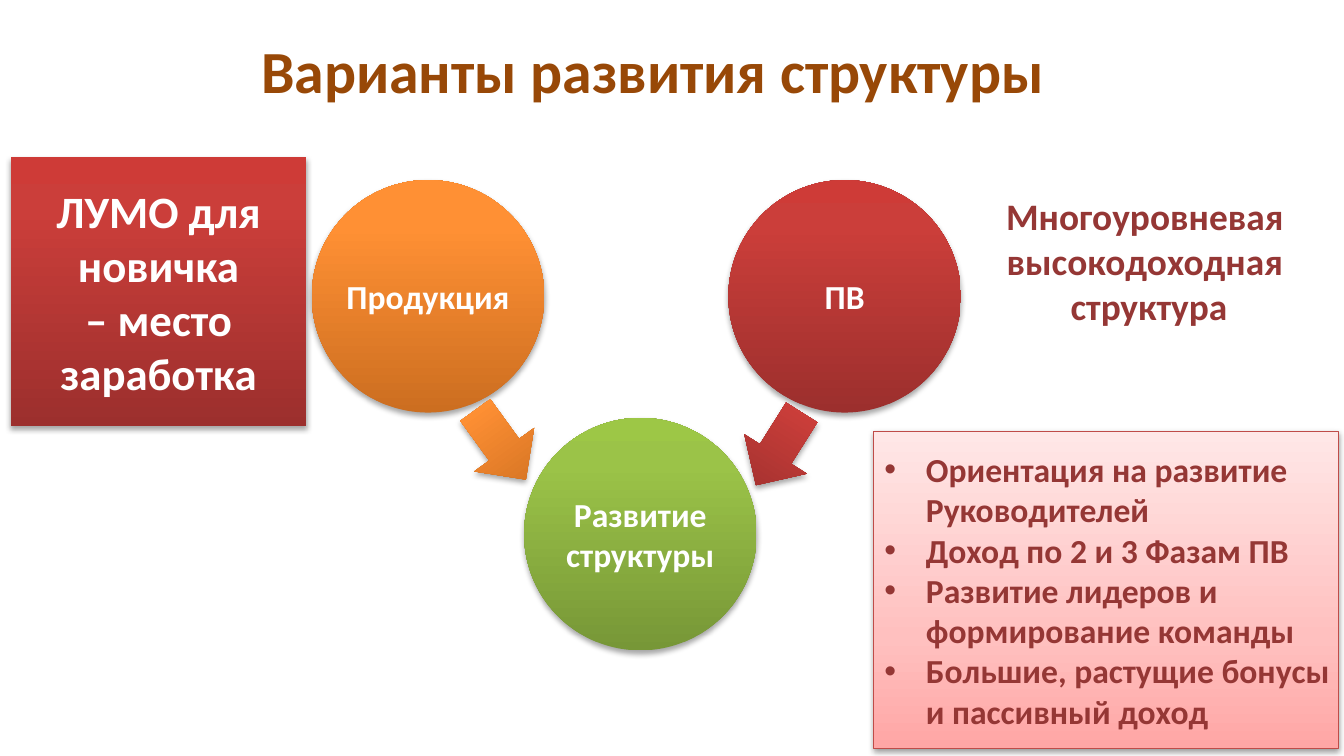
"""Build a slide on the ways a sales structure develops."""
from dataclasses import dataclass
from typing import NamedTuple

from pptx import Presentation, util as u
from pptx.dml.color import RGBColor
from pptx.enum import shapes, text
from pptx.oxml import parse_xml
from pptx.oxml.ns import nsdecls, qn

WIDE = u.Inches(10)
HIGH = WIDE * 9 // 16
CELL = 0.1
HUES = {"white": "FFFFFF", "brown": "984807", "wine": "953735", "edge": "BF4C48"}
FADES = {
    "orange": ((0, "CC6E20"), (80, "FF9034"), (100, "FF9136")),
    "red": ((0, "9C2F2D"), (80, "CB3E3A"), (100, "CE3B37")),
    "green": ((0, "779737"), (80, "9BC348"), (100, "9DC746")),
    "pink": ((0, "FFA6A5"), (35, "FFC0BF"), (100, "FFE7E7")),
}
KIND = shapes.MSO_SHAPE
NONE = (0, 0, 0, 0)
SNUG = (0, 0.04, 0, 0.04)
DISC = 17.3


class Box(NamedTuple):
    col: float
    row: float
    cols: float
    rows: float

    def lens(self) -> list:
        return [u.Inches(n * CELL) for n in self]


@dataclass
class Words:
    lines: tuple
    size: int
    hue: str
    pad: tuple = (0.1, 0.05, 0.1, 0.05)
    mid: bool = True
    wrap: bool = True
    list: bool = False


@dataclass
class Form:
    kind: int
    box: Box
    fade: str
    words: Words | None = None
    turn: float = 0
    edge: str | None = None
    dim: int = 35
    drop: float = 1.8


def write(shape, words: Words) -> None:
    frame = shape.text_frame
    frame.word_wrap = words.wrap
    frame.vertical_anchor = text.MSO_ANCHOR.MIDDLE if words.mid else text.MSO_ANCHOR.TOP
    (frame.margin_left, frame.margin_top,
     frame.margin_right, frame.margin_bottom) = map(u.Inches, words.pad)
    for num, line in enumerate(words.lines):
        para = frame.add_paragraph() if num else frame.paragraphs[0]
        para.text = line
        para.alignment = text.PP_ALIGN.LEFT if words.list else text.PP_ALIGN.CENTER
        if words.list:
            prop = para._p.get_or_add_pPr()
            prop.set("marL", str(u.Inches(0.31)))
            prop.set("indent", str(u.Inches(-0.31)))
            for tag in ('a:buFont {} typeface="Arial"', 'a:buChar {} char="•"'):
                prop.append(parse_xml(f"<{tag.format(nsdecls('a'))}/>"))
        font = para.font
        font.name, font.size, font.bold = "Calibri", u.Pt(words.size), True
        font.color.rgb = RGBColor.from_string(HUES[words.hue])


def label(slide, box: Box, words: Words) -> None:
    shape = slide.shapes.add_textbox(*box.lens())
    write(shape, words)
    shape.text_frame.auto_size = text.MSO_AUTO_SIZE.SHAPE_TO_FIT_TEXT


def paint(shape, fade: str) -> None:
    shape.fill.gradient()
    shape.fill.gradient_angle = 90
    grad = shape._element.spPr.find(qn("a:gradFill"))
    stops = "".join(f'<a:gs pos="{pos * 1000}"><a:srgbClr val="{hue}"/></a:gs>'
                    for pos, hue in FADES[fade])
    grad.replace(grad.find(qn("a:gsLst")),
                 parse_xml(f"<a:gsLst {nsdecls('a')}>{stops}</a:gsLst>"))


def shade(shape, dim: int, drop: float) -> None:
    shape.shadow.inherit = False
    shape._element.spPr.find(qn("a:effectLst")).append(parse_xml(
        f'<a:outerShdw {nsdecls("a")} blurRad="{u.Pt(3.1)}" dist="{u.Pt(drop)}" '
        'dir="5400000" rotWithShape="0"><a:srgbClr val="000000">'
        f'<a:alpha val="{dim * 1000}"/></a:srgbClr></a:outerShdw>'))


def draw(slide, form: Form) -> None:
    shape = slide.shapes.add_shape(form.kind, *form.box.lens())
    shape.rotation = form.turn
    paint(shape, form.fade)
    if form.edge:
        shape.line.color.rgb = RGBColor.from_string(HUES[form.edge])
        shape.line.width = u.Pt(0.75)
    else:
        shape.line.fill.background()
    shade(shape, form.dim, form.drop)
    if form.words:
        write(shape, form.words)


def disc(col: float, row: float, fade: str, name: str) -> Form:
    return Form(KIND.OVAL, Box(col, row, DISC, DISC), fade,
                Words((name,), 18, "white", NONE))


def arrow(col: float, row: float, fade: str, turn: float) -> Form:
    return Form(KIND.DOWN_ARROW, Box(col, row, 5.5, 6.4), fade, turn=turn)


GOALS = Words((
    "Ориентация на развитие Руководителей",
    "Доход по 2 и 3 Фазам ПВ",
    "Развитие лидеров и формирование команды",
    "Большие, растущие бонусы и пассивный доход",
), 18, "wine", (0.08, 0.05, 0.04, 0.05), list=True)
FORMS = (
    Form(KIND.RECTANGLE, Box(65, 32.1, 34.6, 23.6), "pink", GOALS,
         edge="edge", dim=38, drop=1.6),
    disc(23.2, 13.4, "orange", "Продукция"),
    disc(54.2, 13.4, "red", "ПВ"),
    disc(39, 31.1, "green", "Развитие структуры"),
    arrow(34.5, 29.9, "orange", 324),
    arrow(55.2, 30.2, "red", 32.2),
    Form(KIND.RECTANGLE, Box(0.8, 11.7, 22, 20), "red",
         Words(("ЛУМО для новичка\v– место заработка",), 24, "white")),
)


def main() -> None:
    deck = Presentation()
    deck.slide_width, deck.slide_height = WIDE, HIGH
    slide = deck.slides.add_slide(deck.slide_layouts[6])
    label(slide, Box(72.8, 14, 25.4, 10.9), Words(
        ("Многоуровневая \vвысокодоходная \vструктура",), 20, "wine", SNUG, mid=False))
    for form in FORMS:
        draw(slide, form)
    label(slide, Box(19.2, 2.1, 58.8, 6.2), Words(
        ("Варианты развития структуры",), 32, "brown", SNUG, mid=False, wrap=False))
    deck.save("out.pptx")


if __name__ == "__main__":
    main()
